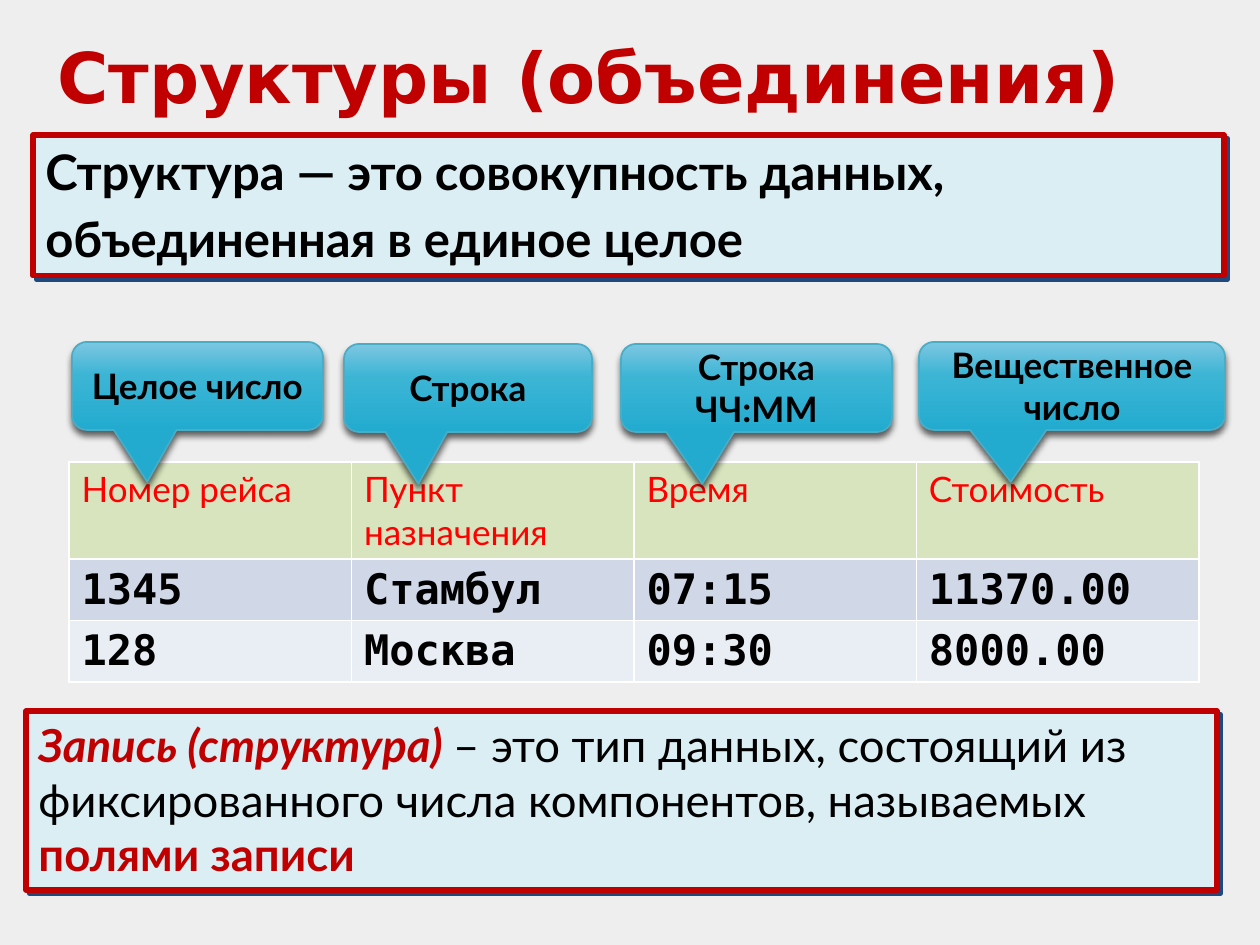
import copy

import pptx
import pptx.dml.color
import pptx.enum.shapes
import pptx.enum.text
import pptx.util
from lxml import etree
from pptx.oxml.ns import qn

RGB = pptx.dml.color.RGBColor
SHAPE = pptx.enum.shapes.MSO_SHAPE
ANCHOR = pptx.enum.text.MSO_ANCHOR
ALIGN = pptx.enum.text.PP_ALIGN

SCALE = 914400 / 126
GREY = RGB(0xEE, 0xEE, 0xEE)
BLACK = RGB(0, 0, 0)
WHITE = RGB(0xFF, 0xFF, 0xFF)
RED = RGB(0xFF, 0, 0)
CRIMSON = RGB(0xC0, 0, 0)
NAVY = RGB(0x1F, 0x49, 0x7D)
ICE = RGB(0xDB, 0xEE, 0xF4)
TEAL = RGB(0x4B, 0xAC, 0xC6)
GREEN = RGB(0xD7, 0xE4, 0xBD)
BAND = RGB(0xD0, 0xD8, 0xE8)
PALE = RGB(0xE9, 0xED, 0xF4)
GLOSS = ((0, RGB(0x22, 0xAB, 0xCF)), (0.62, RGB(0x3C, 0xB5, 0xD5)),
         (1, RGB(0x7D, 0xC7, 0xE1)))

TITLE = dict(name="DejaVu Sans", size=40, bold=True, color=CRIMSON)
LEAD = dict(name="Lato", size=28, bold=True, color=BLACK)
BODY = dict(name="Lato", size=26, bold=False, color=BLACK)
TERM = dict(BODY, bold=True, color=CRIMSON)
LABEL = dict(name="Lato", size=20, bold=True, color=BLACK)
HEAD = dict(name="Lato", size=20, bold=False, color=RED)
DATA = dict(name="DejaVu Sans Mono", size=24, bold=True, color=BLACK)


def px(num):
    return pptx.util.Emu(round(num * SCALE))


def style(font, form):
    for key, val in form.items():
        if key == "color":
            font.color.rgb = val
        else:
            setattr(font, key, pptx.util.Pt(val) if key == "size" else val)


def write(frame, paras, align=ALIGN.LEFT, gap=0):
    """Fill a text frame; each paragraph is a list of (text, format) runs."""
    frame.word_wrap = True
    for i, runs in enumerate(paras):
        para = frame.paragraphs[0] if i == 0 else frame.add_paragraph()
        para.alignment = align
        if i and gap:
            para.space_before = pptx.util.Pt(gap)
        for text, form in runs:
            run = para.add_run()
            run.text = text
            style(run.font, form)


def tint(node, color, alpha=100):
    clr = etree.SubElement(node, qn("a:srgbClr"), val=str(color))
    if alpha < 100:
        etree.SubElement(clr, qn("a:alpha"), val=str(alpha * 1000))


def shade(shape, color, alpha, blur, dist, turn):
    """Give a shape an outer shadow; blur and dist are in points."""
    shape.shadow.inherit = False
    node = etree.SubElement(
        shape.element.spPr.find(qn("a:effectLst")), qn("a:outerShdw"),
        blurRad=str(pptx.util.Pt(blur)), dist=str(pptx.util.Pt(dist)),
        dir=str(turn * 60000), algn="ctr", rotWithShape="0")
    tint(node, color, alpha)


def block(slide, kind, box, line, width):
    shape = slide.shapes.add_shape(kind, *map(px, box))
    shape.line.color.rgb = line
    shape.line.width = pptx.util.Pt(width)
    return shape


def title(slide, box, text):
    frame = slide.shapes.add_textbox(*map(px, box)).text_frame
    write(frame, [[(text, TITLE)]])


def panel(slide, box, paras):
    shape = block(slide, SHAPE.RECTANGLE, box, CRIMSON, 3)
    shape.fill.solid()
    shape.fill.fore_color.rgb = ICE
    shade(shape, NAVY, 100, 0, 2.8, 45)
    shape.text_frame.vertical_anchor = ANCHOR.TOP
    write(shape.text_frame, paras, gap=5)


def callout(slide, box, lines):
    shape = block(slide, SHAPE.ROUNDED_RECTANGULAR_CALLOUT, box, TEAL, 1)
    for i, val in enumerate((-0.2, 1.09, 0.17)):
        shape.adjustments[i] = val
    fill = shape.fill
    fill.gradient()
    fill.gradient_angle = 90
    stops = shape.element.spPr.find(".//" + qn("a:gsLst"))
    stops.append(copy.deepcopy(stops[-1]))
    for stop, (pos, color) in zip(fill.gradient_stops, GLOSS):
        stop.position = pos
        stop.color.rgb = color
    shade(shape, BLACK, 61, 4, 3, 90)
    shape.text_frame.vertical_anchor = ANCHOR.MIDDLE
    write(shape.text_frame, [[(line, LABEL)] for line in lines], ALIGN.CENTER)


def border(cell, base):
    """Draw white cell edges, with the bottom one base points wide."""
    props = cell._tc.get_or_add_tcPr()
    edges = (("L", 1), ("R", 1), ("T", 1), ("B", base))
    for i, (side, width) in enumerate(edges):
        line = etree.Element(qn("a:ln" + side), w=str(pptx.util.Pt(width)))
        tint(etree.SubElement(line, qn("a:solidFill")), WHITE)
        props.insert(i, line)


def flights(slide, box, rows):
    table = slide.shapes.add_table(len(rows), len(rows[0]),
                                   *map(px, box)).table
    for col in table.columns:
        col.width = px(box[2] / len(rows[0]))
    looks = ((89, GREEN, HEAD, 1), (59, BAND, DATA, 1), (59, PALE, DATA, 1))
    for r, (high, fill, form, base) in enumerate(looks):
        table.rows[r].height = px(high)
        for c, text in enumerate(rows[r]):
            cell = table.cell(r, c)
            cell.fill.solid()
            cell.fill.fore_color.rgb = fill
            border(cell, base)
            write(cell.text_frame, [[(text, form)]])


def main():
    deck = pptx.Presentation()
    deck.slide_width, deck.slide_height = px(1260), px(945)
    slide = deck.slides.add_slide(deck.slide_layouts[6])
    slide.background.fill.solid()
    slide.background.fill.fore_color.rgb = GREY

    panel(slide, (33, 135, 1191, 141), [
        [("Структура — это совокупность данных,", LEAD)],
        [("объединенная в единое целое", LEAD)]])
    flights(slide, (69, 462, 1130, 207), (
        ("Номер рейса", "Пункт назначения", "Время", "Стоимость"),
        ("1345", "Стамбул", "07:15", "11370.00"),
        ("128", "Москва", "09:30", "8000.00")))
    panel(slide, (26, 711, 1191, 179), [[
        ("Запись (структура) ", dict(TERM, italic=True)),
        ("– это тип данных, состоящий из фиксированного числа "
         "компонентов, называемых ", BODY),
        ("полями записи", TERM)]])
    for left, top, wide, lines in (
            (72, 342, 251, ["Целое число"]),
            (344, 344, 248, ["Строка"]),
            (621, 344, 271, ["Строка", "ЧЧ:ММ"]),
            (919, 342, 306, ["Вещественное число"])):
        callout(slide, (left, top, wide, 88), lines)
    title(slide, (45, 27, 1169, 97), "Структуры (объединения)")
    deck.save("out.pptx")


if __name__ == "__main__":
    main()
